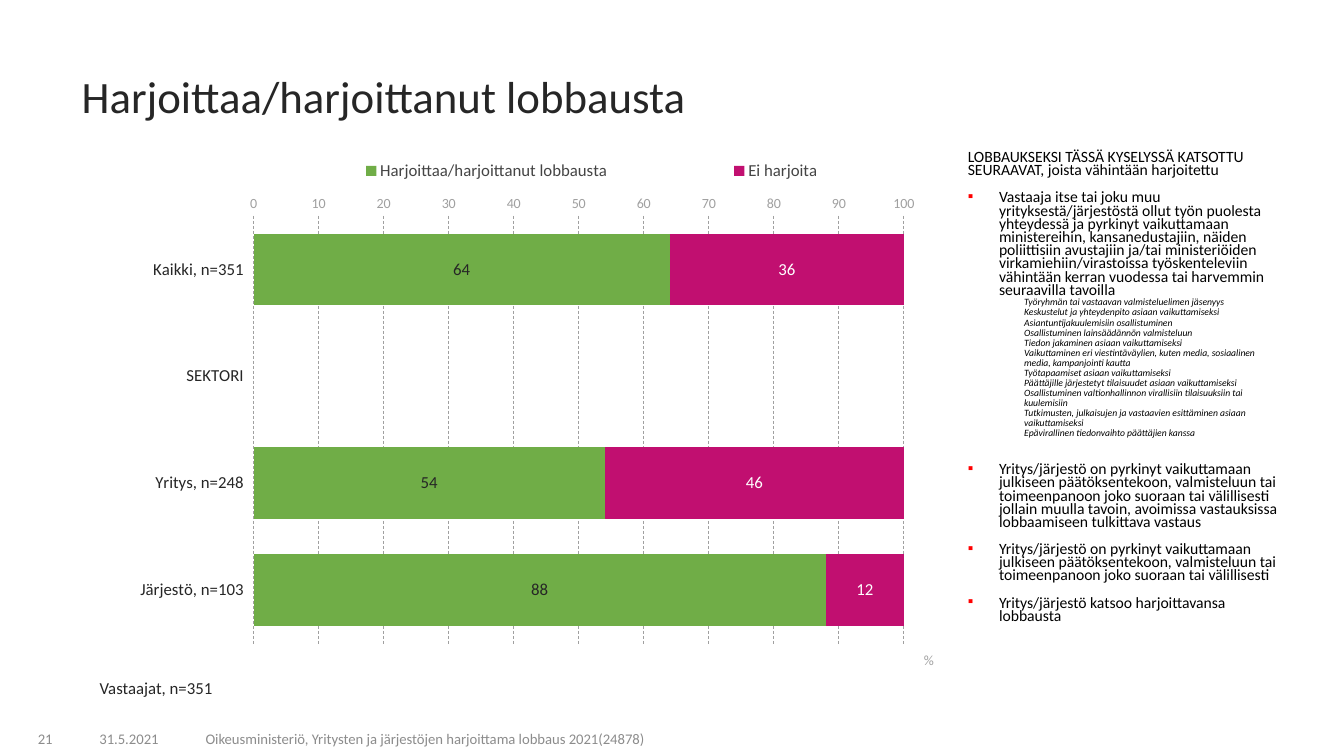
from pptx import Presentation
from pptx.chart.data import CategoryChartData
from pptx.dml.color import RGBColor
from pptx.enum.chart import (XL_AXIS_CROSSES, XL_CHART_TYPE, XL_LABEL_POSITION,
                             XL_LEGEND_POSITION, XL_TICK_LABEL_POSITION, XL_TICK_MARK)
from pptx.enum.dml import MSO_LINE
from pptx.enum.text import MSO_ANCHOR, PP_ALIGN
from pptx.oxml import parse_xml
from pptx.oxml.ns import nsdecls, qn
from pptx.util import Inches, Pt

FONT = "Calibri"
DARK, GREY, FOOTER = "262626", "A0A0A0", "8C8C8C"
DEFINITION = "LOBBAUKSEKSI TÄSSÄ KYSELYSSÄ KATSOTTU SEURAAVAT, joista vähintään harjoitettu"
CONTACT = ("Vastaaja itse tai joku muu yrityksestä/järjestöstä ollut työn puolesta yhteydessä ja "
           "pyrkinyt vaikuttamaan ministereihin, kansanedustajiin, näiden poliittisiin avustajiin "
           "ja/tai ministeriöiden virkamiehiin/virastoissa työskenteleviin vähintään kerran "
           "vuodessa tai harvemmin seuraavilla tavoilla")
METHODS = [
    "Työryhmän tai vastaavan valmisteluelimen jäsenyys",
    "Keskustelut ja yhteydenpito asiaan vaikuttamiseksi",
    "Asiantuntijakuulemisiin osallistuminen",
    "Osallistuminen lainsäädännön valmisteluun",
    "Tiedon jakaminen asiaan vaikuttamiseksi",
    "Vaikuttaminen eri viestintäväylien, kuten media, sosiaalinen media, kampanjointi kautta",
    "Työtapaamiset asiaan vaikuttamiseksi",
    "Päättäjille järjestetyt tilaisuudet asiaan vaikuttamiseksi",
    "Osallistuminen valtionhallinnon virallisiin tilaisuuksiin tai kuulemisiin",
    "Tutkimusten, julkaisujen ja vastaavien esittäminen asiaan vaikuttamiseksi",
    "Epävirallinen tiedonvaihto päättäjien kanssa",
]
OTHER_CRITERIA = [
    "Yritys/järjestö on pyrkinyt vaikuttamaan julkiseen päätöksentekoon, valmisteluun tai "
    "toimeenpanoon joko suoraan tai välillisesti jollain muulla tavoin, avoimissa vastauksissa "
    "lobbaamiseen tulkittava vastaus",
    "Yritys/järjestö on pyrkinyt vaikuttamaan julkiseen päätöksentekoon, valmisteluun tai "
    "toimeenpanoon joko suoraan tai välillisesti",
    "Yritys/järjestö katsoo harjoittavansa lobbausta",
]
CATEGORIES = ["Kaikki, n=351", "SEKTORI", "Yritys, n=248", "Järjestö, n=103"]
SERIES = [
    ("Harjoittaa/harjoittanut lobbausta", [64, None, 54, 88], "70AD47", DARK),
    ("Ei harjoita", [36, None, 46, 12], "C10F70", "FFFFFF"),
]


def color(value):
    """Turn a hex string into a colour."""
    return RGBColor.from_string(value)


def set_font(font, size, value, italic=False):
    """Apply the slide's typeface with a size and colour."""
    font.name, font.size = FONT, Pt(size)
    font.bold, font.italic = False, italic
    font.color.rgb = color(value)


def add_text_frame(slide, box, anchor=MSO_ANCHOR.TOP):
    """Add a wrapping text box and return its text frame."""
    frame = slide.shapes.add_textbox(*map(Inches, box)).text_frame
    frame.word_wrap = True
    frame.vertical_anchor = anchor
    return frame


def add_line(slide, box, text, size, value, align=PP_ALIGN.LEFT, anchor=MSO_ANCHOR.TOP):
    """Add a text box with a single paragraph."""
    paragraph = add_text_frame(slide, box, anchor).paragraphs[0]
    paragraph.text = text
    paragraph.alignment = align
    set_font(paragraph.font, size, value)
    return paragraph


def add_title(slide, box, text):
    """Place and format the title placeholder."""
    title = slide.shapes.title
    title.left, title.top, title.width, title.height = map(Inches, box)
    title.text_frame.vertical_anchor = MSO_ANCHOR.MIDDLE
    paragraph = title.text_frame.paragraphs[0]
    paragraph.text = text
    paragraph.alignment = PP_ALIGN.LEFT
    paragraph.line_spacing = 0.9
    set_font(paragraph.font, 32, DARK)


def add_bullet(paragraph):
    """Give a paragraph a red square bullet with a hanging indent."""
    properties = paragraph._p.get_or_add_pPr()
    properties.set("marL", str(Inches(0.31)))
    properties.set("indent", str(-Inches(0.31)))
    for body in ('buClr {}><a:srgbClr val="FF0000"/></a:buClr>',
                 'buFont {} typeface="Arial"/>', 'buChar {} char="▪"/>'):
        properties.append(parse_xml("<a:" + body.format(nsdecls("a"))))


def add_criteria(slide, box):
    """Add the column that defines lobbying."""
    frame = add_text_frame(slide, box)
    items = [(DEFINITION, "heading"), (CONTACT, "bullet")]
    items += [(method, "method") for method in METHODS]
    items += [(criterion, "bullet") for criterion in OTHER_CRITERIA]
    for index, (text, kind) in enumerate(items):
        paragraph = frame.add_paragraph() if index else frame.paragraphs[0]
        paragraph.text = text
        if kind == "method":
            paragraph.level = 1
            paragraph._p.get_or_add_pPr().set("marL", str(Inches(0.56)))
            paragraph.line_spacing = 0.87
            set_font(paragraph.font, 6.9, "000000", italic=True)
            if text == METHODS[-1]:
                paragraph.space_after = Pt(8)
            continue
        paragraph.line_spacing = 0.7
        if kind == "bullet":
            paragraph.space_before = Pt(10)
            add_bullet(paragraph)
        set_font(paragraph.font, 11.2, "000000")


def set_layout(element, index, inner=False, **fractions):
    """Give a chart part a manual layout in fractions of the chart."""
    for layout in element.findall(qn("c:layout")):
        element.remove(layout)
    values = {"layoutTarget": "inner"} if inner else {}
    values.update(xMode="edge", yMode="edge", **fractions)
    parts = "".join(f'<c:{name} val="{value}"/>' for name, value in values.items())
    element.insert(index, parse_xml(
        f'<c:layout {nsdecls("c")}><c:manualLayout>{parts}</c:manualLayout></c:layout>'))


def format_axes(chart):
    """Format the category axis, the percentage axis and its gridlines."""
    categories, values = chart.category_axis, chart.value_axis
    for axis, size, value in ((categories, 12, DARK), (values, 10, GREY)):
        axis.major_tick_mark = axis.minor_tick_mark = XL_TICK_MARK.NONE
        axis.format.line.fill.background()
        set_font(axis.tick_labels.font, size, value)
    categories.reverse_order = True
    categories.crosses = XL_AXIS_CROSSES.MAXIMUM
    categories.tick_label_position = XL_TICK_LABEL_POSITION.LOW
    values.minimum_scale, values.maximum_scale, values.major_unit = 0, 100.01, 10
    values.tick_labels.number_format = "General"
    values.tick_labels.number_format_is_linked = False
    values.has_major_gridlines = True
    grid = values.major_gridlines.format.line
    grid.color.rgb, grid.width, grid.dash_style = color(GREY), Pt(0.5), MSO_LINE.DASH
    title = values.axis_title
    title.text_frame.text = "%"
    set_font(title.text_frame.paragraphs[0].font, 10, GREY)
    set_layout(title._element, 1, x=0.98, y=0.95)


def add_lobbying_chart(slide, box):
    """Add the stacked bar chart of respondents who lobby."""
    data = CategoryChartData()
    data.categories = CATEGORIES
    for name, values, _, _ in SERIES:
        data.add_series(name, values)
    chart = slide.shapes.add_chart(XL_CHART_TYPE.BAR_STACKED, *map(Inches, box), data).chart
    set_font(chart.font, 12, "000000")
    chart.has_title = False
    format_axes(chart)
    plot = chart.plots[0]
    plot.gap_width, plot.overlap, plot.vary_by_categories = 50, 100, False
    for series, (_, _, fill, label) in zip(plot.series, SERIES):
        series.format.fill.solid()
        series.format.fill.fore_color.rgb = color(fill)
        labels = series.data_labels
        labels.show_value = True
        labels.number_format, labels.number_format_is_linked = "#,##0", False
        labels.position = XL_LABEL_POSITION.CENTER
        set_font(labels.font, 12, label)
    chart.has_legend = True
    legend = chart.legend
    legend.position, legend.include_in_layout = XL_LEGEND_POSITION.TOP, False
    set_font(legend.font, 12, "444444")
    set_layout(legend._element, 1, x=0.2, y=0, w=0.8, h=0.09)
    set_layout(plot._element.getparent(), 0, inner=True, x=0.21, y=0.13, w=0.75, h=0.81)


def add_footer(slide, top):
    """Add the page number, date and survey name along the bottom."""
    for left, width, text, align in (
            (0.03, 0.59, "21", PP_ALIGN.RIGHT),
            (0.66, 1.24, "31.5.2021", PP_ALIGN.CENTER),
            (1.94, 5.92, "Oikeusministeriö, Yritysten ja järjestöjen harjoittama lobbaus "
                         "2021(24878)", PP_ALIGN.LEFT)):
        add_line(slide, (left, top, width, 0.3), text, 10.5, FOOTER, align, MSO_ANCHOR.BOTTOM)


def main():
    """Build and save the slide."""
    presentation = Presentation()
    presentation.slide_width, presentation.slide_height = Inches(13.33), Inches(7.5)
    slide = presentation.slides.add_slide(presentation.slide_layouts[5])
    add_title(slide, (0.71, 0.64, 12.07, 0.68), "Harjoittaa/harjoittanut lobbausta")
    add_lobbying_chart(slide, (0.71, 1.46, 8.6, 5.24))
    add_criteria(slide, (9.5, 1.46, 3.28, 5.57))
    add_line(slide, (0.89, 6.7, 9.18, 0.28), "Vastaajat, n=351", 12, DARK).line_spacing = 0.9
    add_footer(slide, 7.16)
    presentation.save("out.pptx")


if __name__ == "__main__":
    main()
